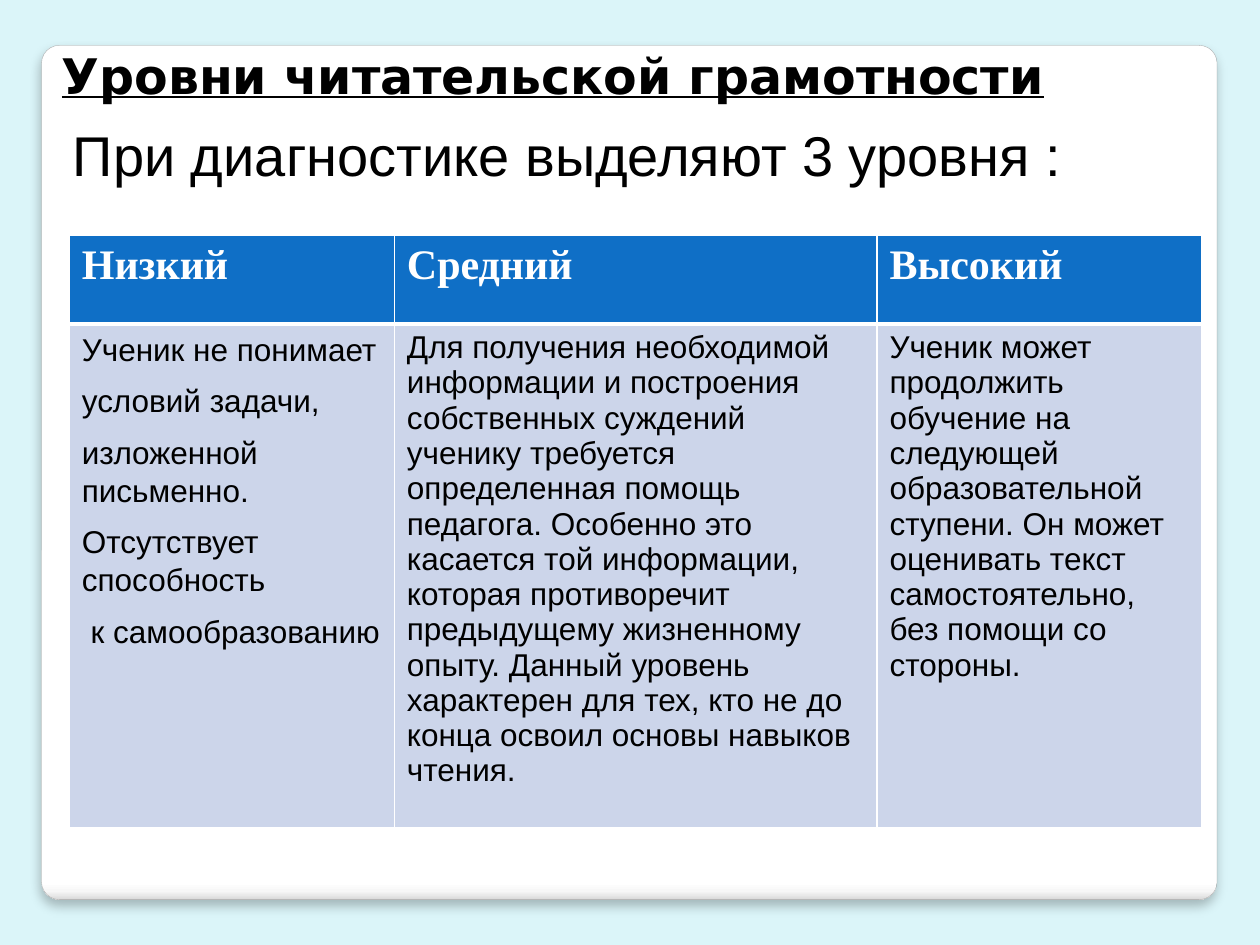
from lxml import etree
from pptx import Presentation
from pptx.dml.color import RGBColor
from pptx.enum.shapes import MSO_SHAPE
from pptx.enum.text import MSO_ANCHOR, MSO_AUTO_SIZE, PP_ALIGN
from pptx.oxml import parse_xml
from pptx.oxml.ns import nsdecls, qn
from pptx.util import Inches, Pt

ROUNDED = MSO_SHAPE.ROUNDED_RECTANGLE
TOP = MSO_ANCHOR.TOP
LEFT = PP_ALIGN.LEFT
NO_FIT = MSO_AUTO_SIZE.NONE
TITLE_ONLY = 5

WIDTH, HEIGHT = 10, 7.5
TABLE_LEFT, TABLE_TOP = 0.55, 1.87
COLUMN_WIDTHS = [2.58, 3.83, 2.58]
ROW_HEIGHTS = [0.7, 4.0]
SPACED = {"line_spacing": 1.07, "space_after": Pt(8)}

LEVELS = [
    ("Низкий", ["Ученик не понимает", "условий задачи,", "изложенной письменно.",
                "Отсутствует способность", " к самообразованию"], SPACED),
    ("Средний", ["Для получения необходимой информации и построения собственных "
                 "суждений ученику требуется определенная помощь педагога. Особенно "
                 "это касается той информации, которая противоречит предыдущему "
                 "жизненному опыту. Данный уровень характерен для тех, кто не до "
                 "конца освоил основы навыков чтения."], {}),
    ("Высокий", ["Ученик может продолжить обучение на следующей образовательной "
                 "ступени. Он может оценивать текст самостоятельно, без помощи со "
                 "стороны."], {}),
]


def rgb(value):
    return RGBColor.from_string(value)


def place(shape, left, top, width, height):
    shape.left, shape.top = Inches(left), Inches(top)
    shape.width, shape.height = Inches(width), Inches(height)


def write(frame, lines, font, size, color="000000", bold=False, underline=False,
          line_spacing=1.0, space_after=Pt(0)):
    frame.word_wrap = True
    frame.vertical_anchor = TOP
    for index, line in enumerate(lines):
        paragraph = frame.paragraphs[0] if index == 0 else frame.add_paragraph()
        paragraph.alignment = LEFT
        paragraph.line_spacing = line_spacing
        paragraph.space_before = Pt(0)
        paragraph.space_after = space_after
        run = paragraph.add_run()
        run.text = line
        run.font.name = font
        run.font.size = Pt(size)
        run.font.bold = bold
        run.font.underline = underline
        run.font.color.rgb = rgb(color)


def add_card(slide):
    card = slide.shapes.add_shape(ROUNDED, 0, 0, 0, 0)
    place(card, 0.33, 0.36, 9.33, 6.78)
    card.adjustments[0] = 0.021
    card.fill.gradient()
    card.fill.gradient_angle = 270
    stops = card._element.spPr.find(qn("a:gradFill")).find(qn("a:gsLst"))
    for stop in list(stops):
        stops.remove(stop)
    for percent, color in [(0, "FFFFFF"), (98, "FFFFFF"), (99, "F7F7F7"), (100, "DADADA")]:
        stop = etree.SubElement(stops, qn("a:gs"), pos=str(percent * 1000))
        etree.SubElement(stop, qn("a:srgbClr"), val=color)
    card.line.color.rgb = rgb("A4A4A4")
    card.line.width = Pt(0.16)
    card.shadow.inherit = False
    card._element.spPr.find(qn("a:effectLst")).append(parse_xml(
        f'<a:outerShdw {nsdecls("a")} blurRad="{Pt(6)}" dist="{Pt(4)}" dir="5400000" '
        'rotWithShape="0"><a:srgbClr val="000000"><a:alpha val="25000"/></a:srgbClr>'
        '</a:outerShdw>'))


def add_headings(slide):
    title = slide.shapes.title
    place(title, 0.39, 0.28, 9.34, 0.6)
    title.text_frame.auto_size = NO_FIT
    write(title.text_frame, ["Уровни читательской грамотности"], "DejaVu Sans", 28,
          bold=True, underline=True, **SPACED)
    lead = slide.shapes.add_textbox(0, 0, 0, 0)
    place(lead, 0.48, 0.87, 9.25, 0.75)
    write(lead.text_frame, ["При диагностике выделяют 3 уровня :"], "Arial", 32, **SPACED)


def set_borders(cell, bottom):
    properties = cell._tc.get_or_add_tcPr()
    sides = [("L", 1), ("R", 1), ("T", 1), ("B", bottom)]
    for index, (side, points) in enumerate(sides):
        properties.insert(index, parse_xml(
            f'<a:ln{side} {nsdecls("a")} w="{Pt(points)}"><a:solidFill>'
            f'<a:srgbClr val="FFFFFF"/></a:solidFill></a:ln{side}>'))


def fill_cell(cell, lines, fill, bottom=1, **style):
    cell.fill.solid()
    cell.fill.fore_color.rgb = rgb(fill)
    set_borders(cell, bottom)
    write(cell.text_frame, lines, **style)


def add_levels_table(slide):
    frame = slide.shapes.add_table(
        len(ROW_HEIGHTS), len(LEVELS), Inches(TABLE_LEFT), Inches(TABLE_TOP),
        Inches(sum(COLUMN_WIDTHS)), Inches(sum(ROW_HEIGHTS)))
    table = frame.table
    table.horz_banding = False
    for row, height in zip(table.rows, ROW_HEIGHTS):
        row.height = Inches(height)
    for index, (level, description, spacing) in enumerate(LEVELS):
        table.columns[index].width = Inches(COLUMN_WIDTHS[index])
        fill_cell(table.cell(0, index), [level], "0F6FC6", bottom=3,
                  font="Times New Roman", size=24, color="FFFFFF", bold=True)
        fill_cell(table.cell(1, index), description, "CCD5EA",
                  font="Arial", size=18, **spacing)


def main():
    deck = Presentation()
    deck.slide_width, deck.slide_height = Inches(WIDTH), Inches(HEIGHT)
    slide = deck.slides.add_slide(deck.slide_layouts[TITLE_ONLY])
    slide.background.fill.solid()
    slide.background.fill.fore_color.rgb = rgb("DBF5F9")
    add_card(slide)
    title = slide.shapes.title._element
    title.getparent().append(title)
    add_headings(slide)
    add_levels_table(slide)
    deck.save("out.pptx")


if __name__ == "__main__":
    main()
